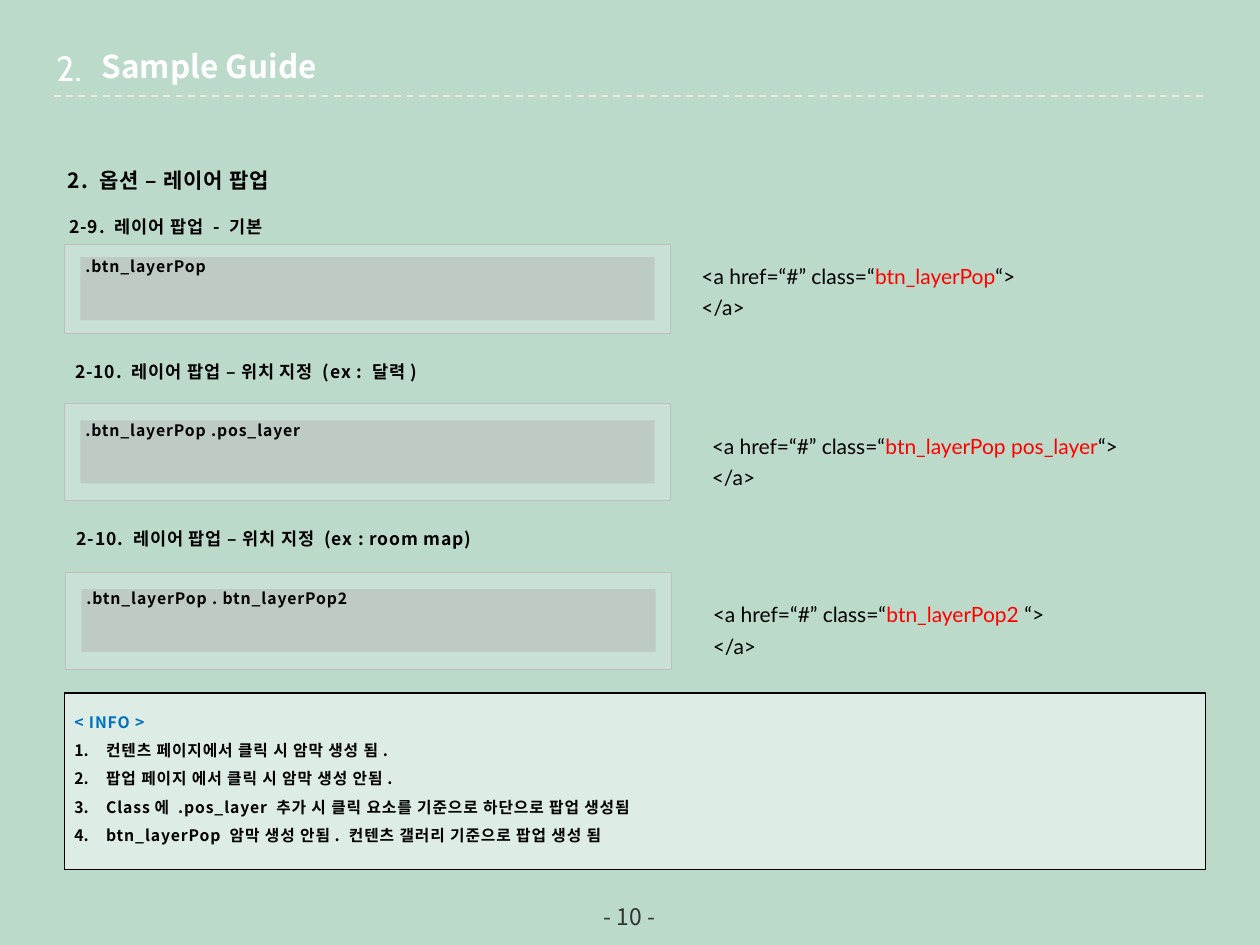
from lxml.etree import SubElement
from pptx import Presentation
from pptx.dml.color import RGBColor
from pptx.enum.dml import MSO_LINE
from pptx.enum.shapes import MSO_CONNECTOR, MSO_SHAPE
from pptx.enum.text import MSO_ANCHOR, MSO_AUTO_SIZE, PP_ALIGN
from pptx.oxml.ns import qn
from pptx.util import Cm, Pt

KOREAN, CODE, NUMBER = "Noto Sans CJK KR", "Lato", "Cabin"
PLAIN_INSETS = (0.25, 0.13, 0.25, 0.13)
LABEL_INSETS = (0.1, 0, 0, 0)
PANEL_WIDTH, FIELD_WIDTH, FIELD_HEIGHT = 12.22, 11.58, 1.27


def color(value):
    return RGBColor.from_string(value)


class SlideBuilder:
    def __init__(self, slide):
        self.slide = slide

    def background(self, value):
        fill = self.slide.background.fill
        fill.solid()
        fill.fore_color.rgb = color(value)

    def frame(self, shape, insets=PLAIN_INSETS, wrap=True, anchor=MSO_ANCHOR.TOP):
        text_frame = shape.text_frame
        text_frame.auto_size = MSO_AUTO_SIZE.NONE
        text_frame.word_wrap = wrap
        text_frame.vertical_anchor = anchor
        (text_frame.margin_left, text_frame.margin_top,
         text_frame.margin_right, text_frame.margin_bottom) = map(Cm, insets)
        return text_frame

    def style(self, paragraph, size, value="000000", name=KOREAN, bold=False,
              tracking=0, spacing=None, align=PP_ALIGN.LEFT):
        paragraph.alignment = align
        if spacing:
            paragraph.line_spacing = spacing
        font = paragraph.font
        font.size, font.name, font.bold = Pt(size), name, bold
        font.color.rgb = color(value)
        properties = paragraph._p.pPr.find(qn("a:defRPr"))
        SubElement(properties, qn("a:ea"), typeface=name)
        if tracking:
            properties.set("spc", str(int(tracking * 100)))

    def title(self, text, left, top, width, height):
        title = self.slide.shapes.title
        title.left, title.top, title.width, title.height = map(Cm, (left, top, width, height))
        paragraph = self.frame(title).paragraphs[0]
        paragraph.text = text
        self.style(paragraph, 18, "FFFFFF", bold=True)

    def text(self, text, left, top, width, height, size, insets=PLAIN_INSETS,
             wrap=True, anchor=MSO_ANCHOR.TOP, **style):
        box = self.slide.shapes.add_textbox(*map(Cm, (left, top, width, height)))
        paragraph = self.frame(box, insets, wrap, anchor).paragraphs[0]
        paragraph.text = text
        self.style(paragraph, size, **style)

    def heading(self, text, left, top, width, height, size, insets):
        self.text(text, left, top, width, height, size, insets, wrap=False,
                  bold=True, tracking=0.5, spacing=1.5)

    def rectangle(self, left, top, width, height, fill, opacity, line=None, line_width=0.25):
        shape = self.slide.shapes.add_shape(
            MSO_SHAPE.RECTANGLE, *map(Cm, (left, top, width, height)))
        shape.shadow.inherit = False
        shape.fill.solid()
        shape.fill.fore_color.rgb = color(fill)
        fill_color = shape._element.spPr.find(qn("a:solidFill"))[0]
        SubElement(fill_color, qn("a:alpha"), val=str(opacity * 1000))
        if line:
            shape.line.color.rgb = color(line)
            shape.line.width = Pt(line_width)
        else:
            shape.line.fill.background()
        return shape

    def panel(self, label, left, top, height):
        self.rectangle(left, top, PANEL_WIDTH, height, "FFFFFF", 20, "BFBFBF")
        field = self.rectangle(left + (PANEL_WIDTH - FIELD_WIDTH) / 2,
                               top + (height - FIELD_HEIGHT) / 2,
                               FIELD_WIDTH, FIELD_HEIGHT, "B5B5B5", 50)
        paragraph = self.frame(field, LABEL_INSETS).paragraphs[0]
        paragraph.text = label
        self.style(paragraph, 9, bold=True, tracking=0.5)

    def code(self, class_name, left, top):
        box = self.slide.shapes.add_textbox(*map(Cm, (left, top, 10.8, 1.55)))
        text_frame = self.frame(box)
        opening, closing = text_frame.paragraphs[0], text_frame.add_paragraph()
        for part in ("<a href=“#” class=“", class_name, "“>"):
            run = opening.add_run()
            run.text = part
            if part == class_name:
                run.font.color.rgb = color("FF0000")
        closing.text = "</a>"
        for paragraph in (opening, closing):
            self.style(paragraph, 12, name=CODE, spacing=Pt(18))

    def info(self, heading, items, left, top, width, height):
        box = self.rectangle(left, top, width, height, "FFFFFF", 50, "000000", 0.75)
        text_frame = self.frame(box, (0.2, 0.2, 0.2, 0))
        paragraph = text_frame.paragraphs[0]
        paragraph.text = heading
        self.style(paragraph, 9, "0070C0", bold=True, tracking=0.5, spacing=1.5)
        for item in items:
            paragraph = text_frame.add_paragraph()
            paragraph.text = item
            properties = paragraph._p.get_or_add_pPr()
            properties.set("marL", str(Cm(0.64)))
            properties.set("indent", str(-Cm(0.64)))
            SubElement(properties, qn("a:buFont"), typeface="+mj-lt")
            SubElement(properties, qn("a:buAutoNum"), type="arabicPeriod")
            self.style(paragraph, 9, bold=True, tracking=0.5, spacing=1.5)

    def dashed_line(self, left, right, top):
        line = self.slide.shapes.add_connector(
            MSO_CONNECTOR.STRAIGHT, *map(Cm, (left, top, right, top)))
        line.line.color.rgb = color("ECE9DA")
        line.line.width = Pt(1)
        line.line.dash_style = MSO_LINE.DASH
        SubElement(line._element.spPr, qn("a:effectLst"))


def main():
    presentation = Presentation()
    presentation.slide_width, presentation.slide_height = Cm(25.4), Cm(19.05)
    slide = presentation.slides.add_slide(presentation.slide_layouts[5])
    builder = SlideBuilder(slide)

    # Header and page number
    builder.background("BBDACA")
    builder.dashed_line(1.09, 24.31, 1.93)
    builder.text("2.", 0.69, 0.81, 1.4, 1.12, 20, value="FFFFFF", name=NUMBER,
                 align=PP_ALIGN.CENTER)
    builder.title("Sample Guide", 1.8, 0.81, 11.71, 1.02)
    builder.text("- 10 -", 9.73, 18.08, 5.92, 0.79, 13, (0, 0, 0, 0),
                 anchor=MSO_ANCHOR.MIDDLE, value="333333", align=PP_ALIGN.CENTER)

    # Section headings
    builder.heading("2. 옵션 – 레이어 팝업", 1.27, 3.12, 4.7, 0.76, 12, LABEL_INSETS)
    builder.heading("2-9. 레이어 팝업 - 기본", 1.3, 4.14, 4.17, 0.64, 10, LABEL_INSETS)
    builder.heading("2-10. 레이어 팝업 – 위치 지정 (ex : 달력)",
                    1.27, 6.93, 7.87, 0.89, 10, PLAIN_INSETS)
    builder.heading("2-10. 레이어 팝업 – 위치 지정 (ex : room map)",
                    1.3, 10.31, 8.92, 0.89, 10, PLAIN_INSETS)

    # Samples: label, panel left, top and height, class in the code, code left and top
    samples = [
        (".btn_layerPop", 1.3, 4.93, 1.78, "btn_layerPop", 13.89, 5.05),
        (".btn_layerPop .pos_layer", 1.3, 8.13, 1.96, "btn_layerPop pos_layer", 14.1, 8.48),
        (".btn_layerPop . btn_layerPop2", 1.32, 11.53, 1.96, "btn_layerPop2 ", 14.12, 11.87),
    ]
    for label, left, top, height, class_name, code_left, code_top in samples:
        builder.panel(label, left, top, height)
        builder.code(class_name, code_left, code_top)

    # Notes
    builder.info("< INFO >", [
        "컨텐츠 페이지에서 클릭 시 암막 생성 됨.",
        "팝업 페이지 에서 클릭 시 암막 생성 안됨.",
        "Class에 .pos_layer 추가 시 클릭 요소를 기준으로 하단으로 팝업 생성됨",
        "btn_layerPop 암막 생성 안됨. 컨텐츠 갤러리 기준으로 팝업 생성 됨",
    ], 1.3, 13.97, 23.01, 3.56)

    presentation.save("out.pptx")


if __name__ == "__main__":
    main()
